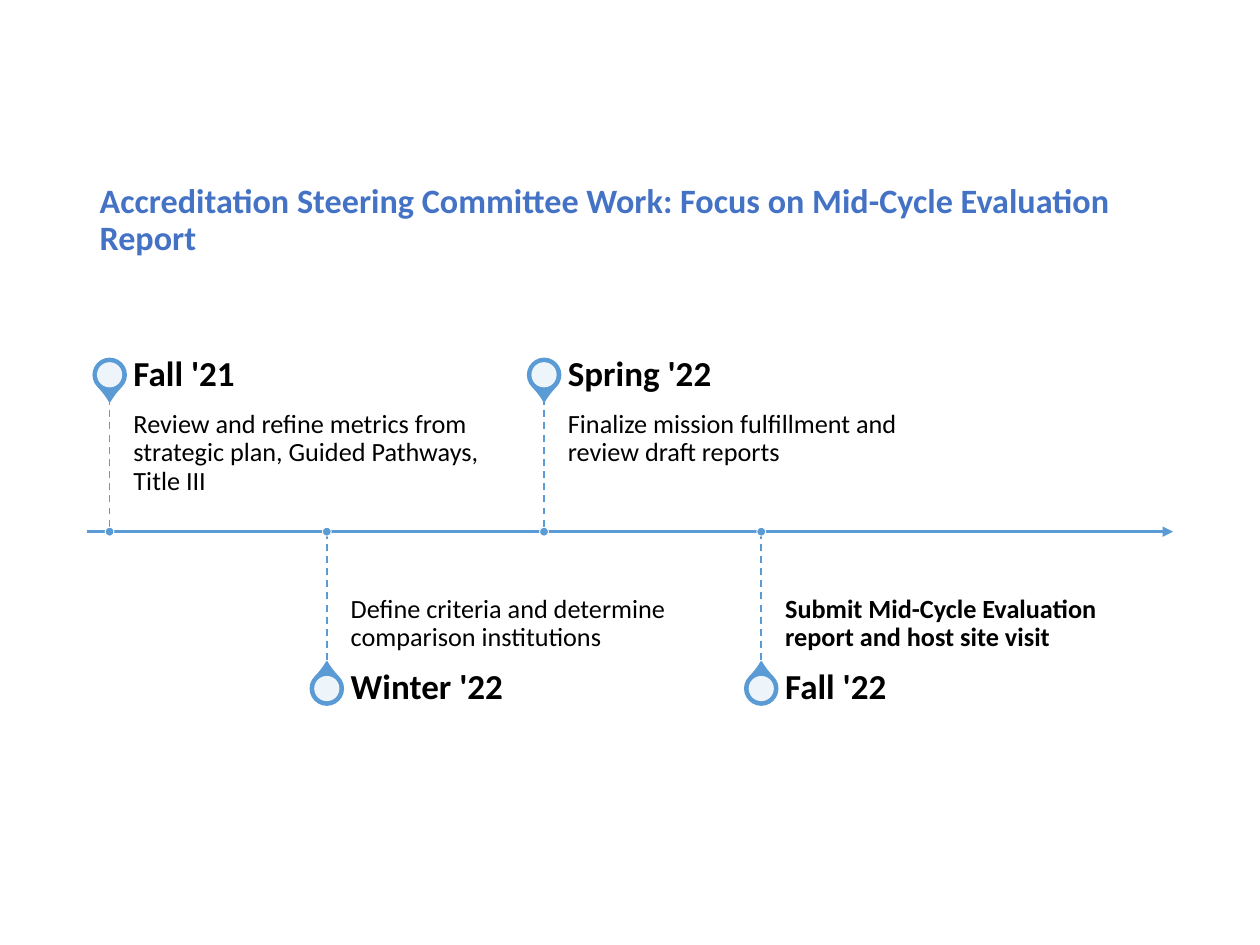
from lxml.etree import SubElement
from pptx import Presentation
from pptx.dml.color import RGBColor
from pptx.enum.dml import MSO_LINE
from pptx.enum.shapes import MSO_CONNECTOR, MSO_SHAPE
from pptx.enum.text import MSO_ANCHOR, MSO_AUTO_SIZE, PP_ALIGN
from pptx.oxml.ns import qn
from pptx.util import Inches, Pt

AXIS_LEFT, AXIS_RIGHT, AXIS_Y = 0.69, 9.31, 4.22
MILESTONE_GAP = (AXIS_RIGHT - AXIS_LEFT) / 5
FIRST_MILESTONE_X = 0.87
STEM_LENGTH = 1.06
LABEL_OFFSET, LABEL_WIDTH, HEADING_HEIGHT = 0.19, 2.87, 0.37

MILESTONES = [
    ("Fall '21", "Review and refine metrics from strategic plan, Guided Pathways, Title III", False),
    ("Winter '22", "Define criteria and determine comparison institutions", False),
    ("Spring '22", "Finalize mission fulfillment and review draft reports", False),
    ("Fall '22", "Submit Mid-Cycle Evaluation report and host site visit", True),
]


def color(hex_value):
    return RGBColor.from_string(hex_value)


def write_text(frame, text, size, hue="000000", bold=False, font="Calibri",
               anchor=MSO_ANCHOR.TOP, insets=(0.1, 0.05, 0.1, 0.05)):
    frame.word_wrap = True
    frame.auto_size = MSO_AUTO_SIZE.NONE
    frame.vertical_anchor = anchor
    (frame.margin_left, frame.margin_top,
     frame.margin_right, frame.margin_bottom) = map(Inches, insets)
    paragraph = frame.paragraphs[0]
    paragraph.alignment = PP_ALIGN.LEFT
    paragraph.line_spacing = 0.9
    run = paragraph.add_run()
    run.text = text
    run.font.name = font
    run.font.size = Pt(size)
    run.font.bold = bold
    run.font.color.rgb = color(hue)


class Timeline:
    accent = "5B9BD5"
    title_hue = "4472C4"
    white = "FFFFFF"

    def __init__(self, slide):
        self.slide = slide

    def title(self, text, left, top, width, height):
        heading = self.slide.shapes.title
        heading.left, heading.top = Inches(left), Inches(top)
        heading.width, heading.height = Inches(width), Inches(height)
        write_text(heading.text_frame, text, 19.5, hue=self.title_hue,
                   bold=True, anchor=MSO_ANCHOR.MIDDLE)

    def label(self, text, left, top, height, **style):
        box = self.slide.shapes.add_textbox(
            Inches(left), Inches(top), Inches(LABEL_WIDTH), Inches(height))
        write_text(box.text_frame, text, **style)

    def line(self, x1, y1, x2, y2, width, dash=None, arrow=False):
        connector = self.slide.shapes.add_connector(
            MSO_CONNECTOR.STRAIGHT, Inches(x1), Inches(y1), Inches(x2), Inches(y2))
        connector.line.color.rgb = color(self.accent)
        connector.line.width = Pt(width)
        if dash:
            connector.line.dash_style = dash
        if arrow:
            SubElement(connector.line._get_or_add_ln(), qn("a:tailEnd"), type="triangle")
        SubElement(connector._element.spPr, qn("a:effectLst"))

    def marker(self, preset, x, y, size, fill, outline=None, width=1.0):
        mark = self.slide.shapes.add_shape(
            preset, Inches(x - size / 2), Inches(y - size / 2), Inches(size), Inches(size))
        mark.shadow.inherit = False
        mark.fill.solid()
        mark.fill.fore_color.rgb = color(fill)
        if outline:
            mark.line.color.rgb = color(outline)
            mark.line.width = Pt(width)
        else:
            mark.line.fill.background()
        return mark

    def pin(self, x, y, rotation):
        drop = self.marker(MSO_SHAPE.TEAR, x, y, 0.26, self.accent, self.accent)
        drop.adjustments[0] = 1.15
        drop.rotation = rotation
        hole = self.marker(MSO_SHAPE.OVAL, x, y, 0.2, self.white)
        hue = hole._element.spPr.find(qn("a:solidFill"))[0]
        SubElement(hue, qn("a:alpha"), val="90000")

    def milestone(self, x, season, task, bold, above):
        direction = -1 if above else 1
        stem_end = AXIS_Y + direction * STEM_LENGTH
        heading_y = stem_end + direction * HEADING_HEIGHT / 2
        text_left = x + LABEL_OFFSET
        self.pin(x, heading_y, 135 if above else 315)
        self.label(task, text_left, min(AXIS_Y, stem_end), STEM_LENGTH,
                   size=15, bold=bold,
                   anchor=MSO_ANCHOR.TOP if above else MSO_ANCHOR.BOTTOM,
                   insets=(0, 0.1, 0.1, 0.16) if above else (0, 0.16, 0, 0.1))
        self.label(season, text_left, heading_y - HEADING_HEIGHT / 2, HEADING_HEIGHT,
                   size=20, bold=True, anchor=MSO_ANCHOR.MIDDLE, insets=(0, 0, 0.14, 0))
        self.line(x, min(AXIS_Y, stem_end), x, max(AXIS_Y, stem_end), 1, dash=MSO_LINE.DASH)
        self.marker(MSO_SHAPE.OVAL, x, AXIS_Y, 0.07, self.accent, self.white, 0.5)


def main():
    deck = Presentation()
    deck.slide_width, deck.slide_height = Inches(10), Inches(7.5)
    timeline = Timeline(deck.slides.add_slide(deck.slide_layouts[5]))
    timeline.title("Accreditation Steering Committee Work: Focus on Mid-Cycle Evaluation Report",
                   0.69, 1.27, 8.85, 0.96)
    timeline.line(AXIS_LEFT, AXIS_Y, AXIS_RIGHT, AXIS_Y, 1.5, arrow=True)
    for index, (season, task, bold) in enumerate(MILESTONES):
        timeline.milestone(FIRST_MILESTONE_X + index * MILESTONE_GAP,
                           season, task, bold, above=index % 2 == 0)
    deck.save("out.pptx")


if __name__ == "__main__":
    main()
